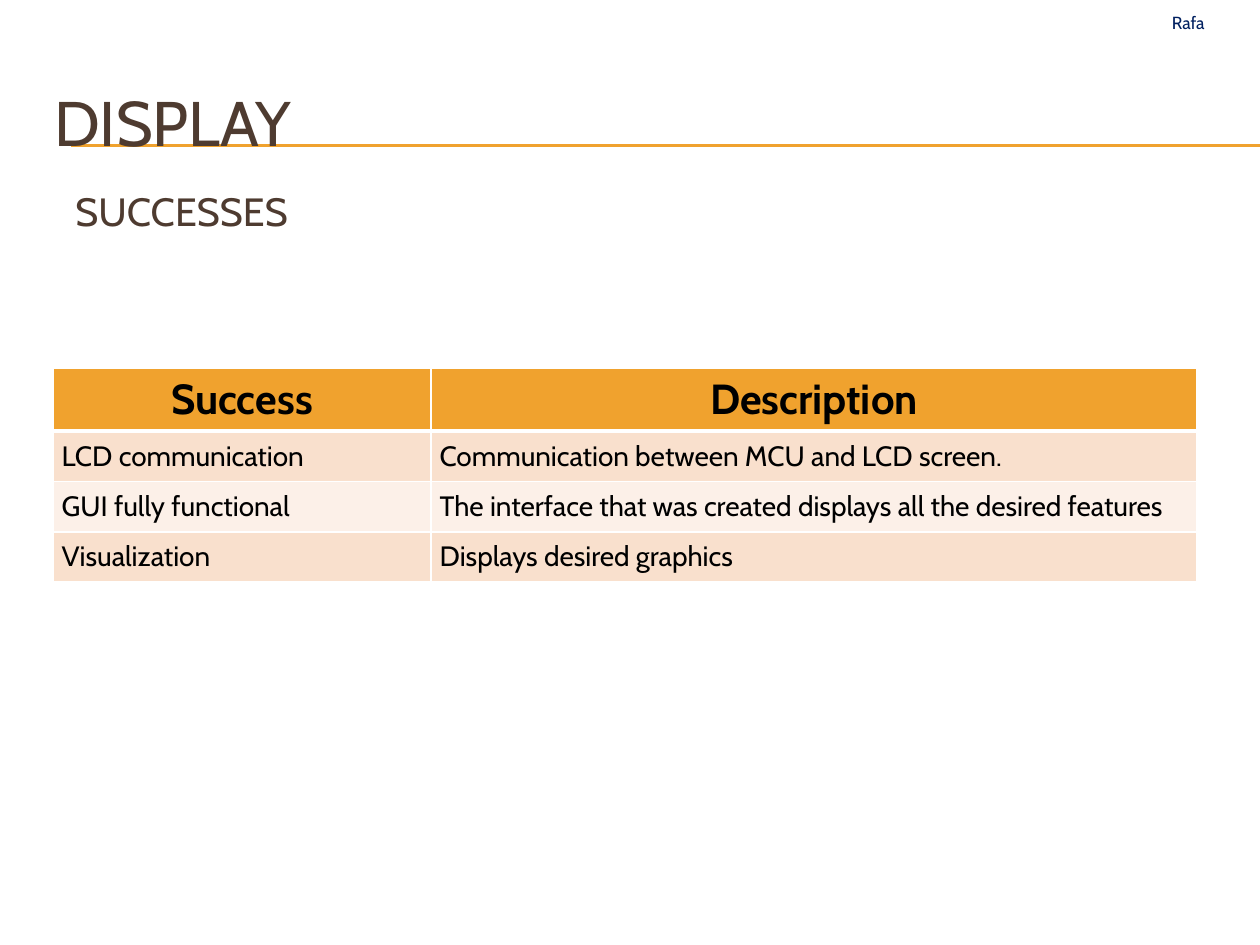
from dataclasses import dataclass

from lxml.etree import SubElement
from pptx import Presentation
from pptx.dml.color import RGBColor
from pptx.enum.shapes import MSO_CONNECTOR
from pptx.enum.text import MSO_ANCHOR, PP_ALIGN
from pptx.oxml import parse_xml
from pptx.oxml.ns import nsdecls, qn
from pptx.util import Inches, Pt


@dataclass(frozen=True)
class Theme:
    """Colours, font and type sizes of the slide."""
    font: str = "Cabin"
    accent: str = "F0A22E"
    heading: str = "4E3B30"
    presenter: str = "002060"
    body: str = "000000"
    border: str = "FFFFFF"
    bands: tuple = ("F9E0CD", "FCF0E8")
    title_size: float = 36
    subtitle_size: float = 22.5
    header_size: float = 24
    cell_size: float = 16
    presenter_size: float = 10


def write(frame, text, *, font, size, color, bold=False, align=PP_ALIGN.LEFT,
          anchor=MSO_ANCHOR.TOP, spacing=None):
    """Put one formatted paragraph into a text frame."""
    frame.word_wrap = True
    frame.vertical_anchor = anchor
    paragraph = frame.paragraphs[0]
    paragraph.alignment = align
    paragraph.line_spacing = spacing
    run = paragraph.add_run()
    run.text = text
    run.font.name, run.font.size, run.font.bold = font, Pt(size), bold
    run.font.color.rgb = RGBColor.from_string(color)


class SlideBuilder:
    """Draws themed elements on a grid of 100 columns by 75 rows."""

    def __init__(self, deck, theme):
        """Start a title-only slide."""
        self.theme = theme
        self.column = deck.slide_width / 100
        self.row = deck.slide_height / 75
        self.slide = deck.slides.add_slide(deck.slide_layouts[5])

    def place(self, left, top, width, height):
        """Turn grid units into slide lengths."""
        return (round(left * self.column), round(top * self.row),
                round(width * self.column), round(height * self.row))

    def title(self, text, *area):
        """Move and fill the title placeholder."""
        heading = self.slide.shapes.title
        heading.left, heading.top, heading.width, heading.height = self.place(*area)
        write(heading.text_frame, text, font=self.theme.font,
              size=self.theme.title_size, color=self.theme.heading,
              anchor=MSO_ANCHOR.MIDDLE)

    def label(self, text, *area, **style):
        """Add a text box."""
        box = self.slide.shapes.add_textbox(*self.place(*area))
        write(box.text_frame, text, font=self.theme.font, **style)

    def rule(self, start, end, level):
        """Add a horizontal line behind the title."""
        left, top, width, _ = self.place(start, level, end - start, 0)
        line = self.slide.shapes.add_connector(
            MSO_CONNECTOR.STRAIGHT, left, top, left + width, top)
        line.line.color.rgb = RGBColor.from_string(self.theme.accent)
        line.line.width = Pt(0.75)
        SubElement(line.element.spPr, qn("a:effectLst"))
        self.slide.shapes.title.element.addprevious(line.element)

    def borders(self, cell, top, bottom):
        """Draw the four edges of a table cell."""
        properties = cell._tc.get_or_add_tcPr()
        edges = {"lnL": 1, "lnR": 1, "lnT": top, "lnB": bottom}
        for position, (edge, points) in enumerate(edges.items()):
            properties.insert(position, parse_xml(
                f'<a:{edge} {nsdecls("a")} w="{Pt(points)}"><a:solidFill>'
                f'<a:srgbClr val="{self.theme.border}"/></a:solidFill></a:{edge}>'))

    def table(self, records, left, top, widths, heights):
        """Add a table with a header row and banded body rows."""
        theme = self.theme
        area = self.place(left, top, sum(widths), sum(heights))
        grid = self.slide.shapes.add_table(len(records), len(widths), *area).table
        for column, width in zip(grid.columns, widths):
            column.width = round(width * self.column)
        for index, (record, height) in enumerate(zip(records, heights)):
            grid.rows[index].height = round(height * self.row)
            header = index == 0
            for cell, text in zip(grid.rows[index].cells, record):
                cell.fill.solid()
                cell.fill.fore_color.rgb = RGBColor.from_string(
                    theme.accent if header else theme.bands[(index - 1) % 2])
                self.borders(cell, 3 if index == 1 else 1, 3 if header else 1)
                if not header:
                    cell.margin_left = cell.margin_right = Inches(0.07)
                    cell.margin_top = cell.margin_bottom = 0
                    cell.vertical_anchor = MSO_ANCHOR.MIDDLE
                write(cell.text_frame, text, font=theme.font, color=theme.body,
                      size=theme.header_size if header else theme.cell_size,
                      bold=header, anchor=None,
                      align=PP_ALIGN.CENTER if header else PP_ALIGN.JUSTIFY)


def main():
    """Build and save the slide."""
    deck = Presentation()
    deck.slide_width, deck.slide_height = Inches(10), Inches(7.5)
    theme = Theme()
    page = SlideBuilder(deck, theme)
    for level in (11.5, 11.6):
        page.rule(5.6, 100, level)
    page.title("DISPLAY", 3.3, 5, 95, 9.2)
    page.label("SUCCESSES", 5, 15, 95, 4.2, size=theme.subtitle_size,
               color=theme.heading, anchor=MSO_ANCHOR.MIDDLE, spacing=0.8)
    successes = [
        ("Success", "Description"),
        ("LCD communication", "Communication between MCU and LCD screen."),
        ("GUI fully functional",
         "The interface that was created displays all the desired features"),
        ("Visualization", "Displays desired graphics"),
    ]
    page.table(successes, 4.2, 29.2, (30, 60.8), (4.9, 4, 4, 4))
    page.label("Rafa", 88.9, 0.5, 10.8, 2.7, size=theme.presenter_size,
               color=theme.presenter, align=PP_ALIGN.CENTER)
    deck.save("out.pptx")


if __name__ == "__main__":
    main()
